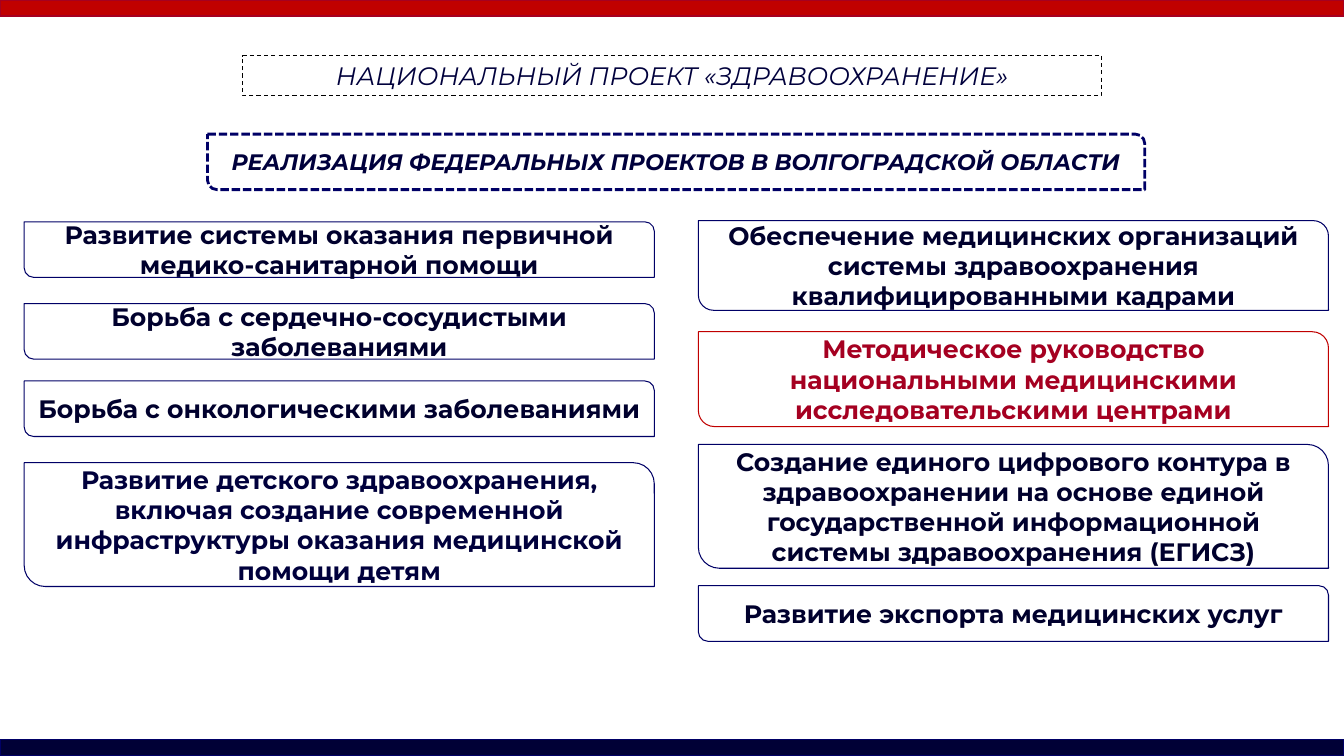
from dataclasses import dataclass

from pptx import Presentation
from pptx.dml.color import RGBColor
from pptx.enum.dml import MSO_LINE
from pptx.enum.shapes import MSO_SHAPE
from pptx.enum.text import MSO_ANCHOR, MSO_AUTO_SIZE, PP_ALIGN
from pptx.util import Cm, Pt


@dataclass(frozen=True)
class Theme:
    font: str = "Montserrat"
    white: str = "FFFFFF"
    black: str = "000000"
    red: str = "C00000"
    wine: str = "A50021"
    blue: str = "000066"
    navy: str = "000036"
    ink: str = "00003C"
    dark: str = "00002D"
    head: int = 16
    body: int = 18


THEME = Theme()
WIDE, HIGH = 33.87, 19.05
CARD_WIDE = 15.88
BAR_HIGH = 0.41

# Each column: left edge, then cards as (top, height, text, text colour, line colour)
COLUMNS = (
    (0.61, (
        (5.59, 1.4, "Развитие системы оказания первичной медико-санитарной помощи",
         THEME.dark, THEME.blue),
        (7.65, 1.4, "Борьба с сердечно-сосудистыми заболеваниями",
         THEME.dark, THEME.blue),
        (9.6, 1.4, "Борьба с онкологическими заболеваниями",
         THEME.dark, THEME.blue),
        (11.66, 3.12, "Развитие детского здравоохранения, включая создание современной "
         "инфраструктуры оказания медицинской помощи детям",
         THEME.ink, THEME.blue),
    )),
    (17.6, (
        (5.56, 2.26, "Обеспечение медицинских организаций системы здравоохранения "
         "квалифицированными кадрами",
         THEME.dark, THEME.blue),
        (8.36, 2.39, "Методическое руководство национальными медицинскими "
         "исследовательскими центрами",
         THEME.wine, THEME.red),
        (11.2, 3.12, "Создание единого цифрового контура в здравоохранении на основе "
         "единой государственной информационной системы здравоохранения (ЕГИСЗ)",
         THEME.dark, THEME.blue),
        (14.76, 1.4, "Развитие экспорта медицинских услуг",
         THEME.dark, THEME.blue),
    )),
)


def apply(target, values):
    for name, value in values.items():
        setattr(target, name, value)


def add_box(slide, kind, place, fill, line, width, dash=None):
    """Add a preset shape; a fill of None leaves it clear."""
    box = slide.shapes.add_shape(kind, *(Cm(n) for n in place))
    box.shadow.inherit = False
    if fill:
        box.fill.solid()
        box.fill.fore_color.rgb = RGBColor.from_string(fill)
    else:
        box.fill.background()
    box.line.color.rgb = RGBColor.from_string(line)
    apply(box.line, {"width": Pt(width), "dash_style": dash})
    return box


def write(box, text, color, size, frame, **style):
    apply(box.text_frame, {"word_wrap": True, **frame})
    para = box.text_frame.paragraphs[0]
    para.alignment = PP_ALIGN.CENTER
    run = para.add_run()
    run.text = text
    apply(run.font, {"name": THEME.font, "size": Pt(size), **style})
    run.font.color.rgb = RGBColor.from_string(color)


def add_bar(slide, top, fill, line):
    add_box(slide, MSO_SHAPE.RECTANGLE, (0, top, WIDE, BAR_HIGH), fill, line, 1)


def add_title(slide, place, text):
    box = add_box(slide, MSO_SHAPE.RECTANGLE, place, None,
                  THEME.black, 0.75, MSO_LINE.DASH)
    frame = {"vertical_anchor": MSO_ANCHOR.TOP,
             "auto_size": MSO_AUTO_SIZE.SHAPE_TO_FIT_TEXT}
    write(box, text, THEME.ink, THEME.body, frame, italic=True)


def add_card(slide, place, text, color, line, size=THEME.body,
             width=0.75, dash=None, italic=None):
    """Add a card rounded at its top right and bottom left corners."""
    box = add_box(slide, MSO_SHAPE.ROUND_2_DIAG_RECTANGLE, place,
                  THEME.white, line, width, dash)
    box.adjustments[0], box.adjustments[1] = 0, 0.17
    sides = ("left", "top", "right", "bottom")
    frame = {f"margin_{side}": Cm(0.1) for side in sides}
    frame["vertical_anchor"] = MSO_ANCHOR.MIDDLE
    write(box, text, color, size, frame, bold=True, italic=italic)


def main():
    deck = Presentation()
    apply(deck, {"slide_width": Cm(WIDE), "slide_height": Cm(HIGH)})
    slide = deck.slides.add_slide(deck.slide_layouts[6])

    add_bar(slide, 0, THEME.red, THEME.wine)
    add_bar(slide, HIGH - BAR_HIGH, THEME.navy, THEME.blue)
    add_card(slide, (5.23, 3.38, 23.62, 1.4),
             "РЕАЛИЗАЦИЯ ФЕДЕРАЛЬНЫХ ПРОЕКТОВ В ВОЛГОГРАДСКОЙ ОБЛАСТИ",
             THEME.ink, THEME.blue, size=THEME.head, width=2,
             dash=MSO_LINE.SQUARE_DOT, italic=True)
    add_title(slide, (6.12, 1.4, 21.64, 1.02),
              "НАЦИОНАЛЬНЫЙ ПРОЕКТ «ЗДРАВООХРАНЕНИЕ»")
    for left, cards in COLUMNS:
        for top, high, text, color, line in cards:
            add_card(slide, (left, top, CARD_WIDE, high), text, color, line)

    deck.save("out.pptx")


if __name__ == "__main__":
    main()
